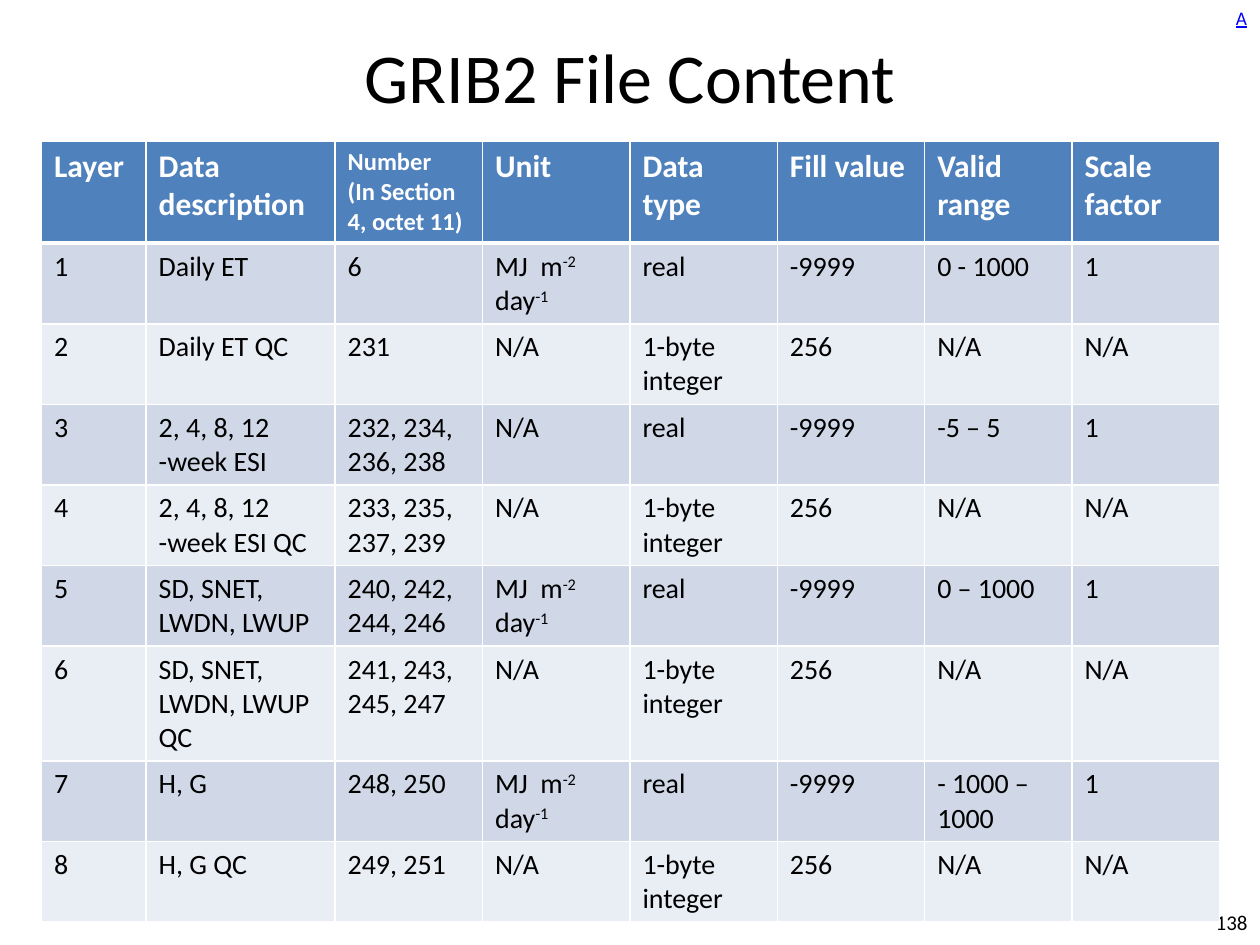
"""Build the slide that tabulates the layers of a GRIB2 file."""
from typing import NamedTuple

from lxml.etree import SubElement
from pptx import Presentation
from pptx.dml.color import RGBColor
from pptx.enum.text import MSO_ANCHOR as Anchor, MSO_AUTO_SIZE as AutoSize, PP_ALIGN as Align
from pptx.oxml.ns import qn
from pptx.util import Inches, Pt

BLACK = RGBColor(0x00, 0x00, 0x00)
WHITE = RGBColor(0xFF, 0xFF, 0xFF)
LINK_BLUE = RGBColor(0x00, 0x00, 0xFF)
HEADER_BLUE = RGBColor(0x4F, 0x81, 0xBD)
BANDS = (RGBColor(0xD0, 0xD8, 0xE8), RGBColor(0xE9, 0xED, 0xF4))
FLUX_UNIT = "MJ  m^-2^ day^-1"


class Layer(NamedTuple):
    """One data row; the defaults describe a quality-control layer."""
    description: str
    number: str
    unit: str = "N/A"
    data_type: str = "1-byte integer"
    fill_value: str = "256"
    valid_range: str = "N/A"
    scale: str = "N/A"


class Label(NamedTuple):
    """A free-standing corner text."""
    text: str
    box: tuple
    align: Align
    anchor: Anchor
    wrap: bool
    style: dict


HEADINGS = ("Layer", "Data description", "Number\v(In Section 4, octet 11)", "Unit",
            "Data type", "Fill value", "Valid range", "Scale factor")
LAYERS = (
    Layer("Daily ET", "6", FLUX_UNIT, "real", "-9999", "0 - 1000", "1"),
    Layer("Daily ET QC", "231"),
    Layer("2, 4, 8, 12 -week ESI", "232, 234, 236, 238", "N/A", "real", "-9999", "-5 – 5", "1"),
    Layer("2, 4, 8, 12 -week ESI QC", "233, 235, 237, 239"),
    Layer("SD, SNET, LWDN, LWUP", "240, 242, 244, 246", FLUX_UNIT, "real", "-9999",
          "0 – 1000", "1"),
    Layer("SD, SNET, LWDN, LWUP\nQC", "241, 243, 245, 247"),
    Layer("H, G", "248, 250", FLUX_UNIT, "real", "-9999", "- 1000 – 1000", "1"),
    Layer("H, G QC", "249, 251"),
)
COLUMN_WIDTHS = (0.83, 1.5) + (1.17,) * 6
HEADER_HEIGHT, ROW_HEIGHT, TALL_ROW_HEIGHT = 0.81, 0.64, 0.91
LABELS = (
    Label("138", (9.25, 7.12, 0.75, 0.4), Align.RIGHT, Anchor.MIDDLE, True,
          {"size": Pt(12), "color": BLACK}),
    Label("A", (9.71, 0, 0.29, 0.29), Align.LEFT, Anchor.TOP, False,
          {"size": Pt(11), "color": LINK_BLUE, "underline": True}),
)


def format_font(font, style: dict) -> None:
    """Apply a dict of format values to a font."""
    font.name = "Calibri"
    for name, value in style.items():
        if name == "color":
            font.color.rgb = value
        else:
            setattr(font, name, value)


def place(shape, box: tuple) -> None:
    """Move and size a shape in inches."""
    for name, length in zip(("left", "top", "width", "height"), box):
        setattr(shape, name, Inches(length))


def write(frame, text: str, style: dict) -> None:
    """Write text whose parts between carets are superscript."""
    for index, line in enumerate(text.split("\n")):
        paragraph = frame.add_paragraph() if index else frame.paragraphs[0]
        for part, piece in enumerate(line.split("^")):
            for row, words in enumerate(piece.split("\v")):
                if row:
                    paragraph.add_line_break()
                run = paragraph.add_run()
                run.text = words
                format_font(run.font, style)
                if part % 2:
                    run._r.get_or_add_rPr().set("baseline", "30000")


def draw_borders(cell, top: float, bottom: float) -> None:
    """Give a cell white borders, with the top and bottom widths in points."""
    properties = cell._tc.get_or_add_tcPr()
    for index, (side, width) in enumerate(zip("LRTB", (1, 1, top, bottom))):
        line = SubElement(properties, qn(f"a:ln{side}"), w=str(Pt(width)))
        fill = SubElement(line, qn("a:solidFill"))
        SubElement(fill, qn("a:srgbClr"), val=str(WHITE))
        properties.insert(index, line)


def fill_cell(cell, text: str, fill: RGBColor, style: dict, top: float, bottom: float) -> None:
    """Write, fill and border one cell."""
    write(cell.text_frame, text, style)
    cell.fill.solid()
    cell.fill.fore_color.rgb = fill
    draw_borders(cell, top, bottom)


def add_layer_table(slide) -> None:
    """Draw the table of layers."""
    table = slide.shapes.add_table(len(LAYERS) + 1, len(HEADINGS), Inches(0.33), Inches(1.12),
                                   Inches(9.33), Inches(6.2)).table
    for column, width in zip(table.columns, COLUMN_WIDTHS):
        column.width = Inches(width)
    table.rows[0].height = Inches(HEADER_HEIGHT)
    for column, heading in enumerate(HEADINGS):
        style = {"size": Pt(14 if "\v" in heading else 18), "bold": True, "color": WHITE}
        fill_cell(table.cell(0, column), heading, HEADER_BLUE, style, 1, 3)
    body_style = {"size": Pt(16), "bold": False, "color": BLACK}
    for number, layer in enumerate(LAYERS, 1):
        tall = "\n" in layer.description
        table.rows[number].height = Inches(TALL_ROW_HEIGHT if tall else ROW_HEIGHT)
        for column, text in enumerate((str(number), *layer)):
            fill_cell(table.cell(number, column), text, BANDS[(number - 1) % 2], body_style,
                      3 if number == 1 else 1, 1)


def add_label(slide, label: Label) -> None:
    """Draw a corner text."""
    box = slide.shapes.add_textbox(*(Inches(length) for length in label.box))
    frame = box.text_frame
    frame.word_wrap = label.wrap
    frame.vertical_anchor = label.anchor
    write(frame, label.text, label.style)
    frame.paragraphs[0].alignment = label.align


def add_title(slide) -> None:
    """Move and format the title."""
    title = slide.shapes.title
    place(title, (0.5, 0.3, 9, 0.7))
    frame = title.text_frame
    frame.auto_size = AutoSize.NONE
    frame.vertical_anchor = Anchor.MIDDLE
    write(frame, "GRIB2 File Content", {"size": Pt(40), "color": BLACK})
    frame.paragraphs[0].alignment = Align.CENTER
    frame.paragraphs[0].line_spacing = 0.85


def main() -> None:
    """Build and save the slide."""
    deck = Presentation()
    deck.slide_width, deck.slide_height = Inches(10), Inches(7.5)
    slide = deck.slides.add_slide(deck.slide_layouts[5])
    for label in LABELS:
        add_label(slide, label)
    add_title(slide)
    add_layer_table(slide)
    deck.save("out.pptx")


if __name__ == "__main__":
    main()
